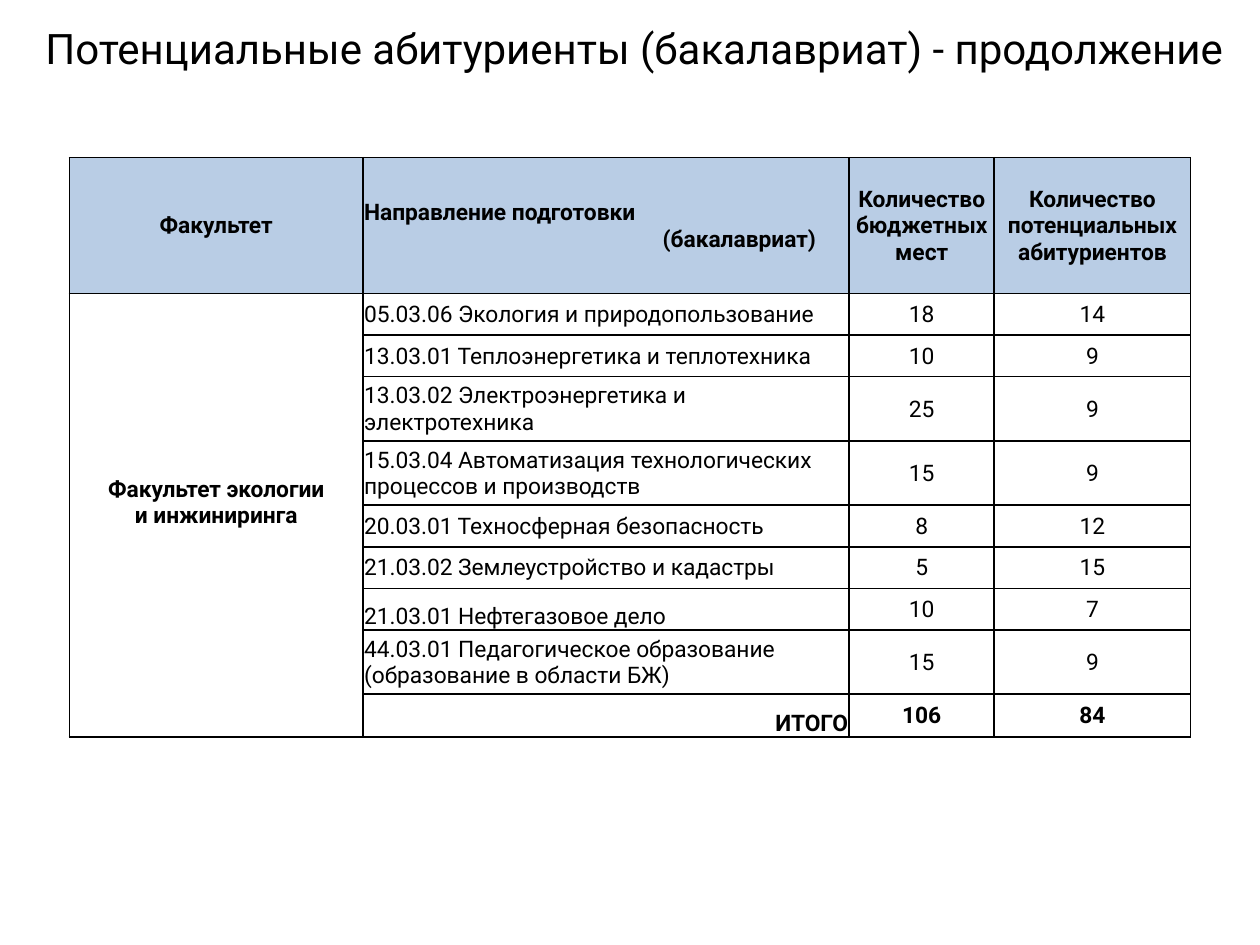
import pptx
import pptx.dml.color
import pptx.enum.text
import pptx.oxml
import pptx.oxml.ns
import pptx.util
from dataclasses import dataclass

Inches = pptx.util.Inches
ALIGN = pptx.enum.text.PP_ALIGN
ANCHOR = pptx.enum.text.MSO_ANCHOR


@dataclass(frozen=True)
class Theme:
    font: str = "Roboto"
    ink: str = "000000"
    header_fill: str = "B9CDE5"
    title_size: int = 24
    table_size: int = 13
    border_width: int = 1


class SlideBuilder:
    def __init__(self, slide, theme):
        self.slide = slide
        self.theme = theme

    def style(self, paragraph, size, bold=False, align=ALIGN.LEFT):
        paragraph.alignment = align
        font_format = {"name": self.theme.font, "size": pptx.util.Pt(size), "bold": bold}
        for name, value in font_format.items():
            setattr(paragraph.font, name, value)
        paragraph.font.color.rgb = pptx.dml.color.RGBColor.from_string(self.theme.ink)

    def title(self, wording, left, top, width, height):
        heading = self.slide.shapes.title
        place = {"left": left, "top": top, "width": width, "height": height}
        for name, value in place.items():
            setattr(heading, name, Inches(value))
        heading.text_frame.text = wording
        heading.text_frame.vertical_anchor = ANCHOR.MIDDLE
        self.style(heading.text_frame.paragraphs[0], self.theme.title_size, align=ALIGN.CENTER)

    def table(self, left, top, columns, rows):
        frame = self.slide.shapes.add_table(
            len(rows), len(columns), Inches(left), Inches(top),
            Inches(sum(columns)), Inches(sum(rows)))
        grid = frame.table
        grid.first_row = grid.horz_banding = False
        for column, width in zip(grid.columns, columns):
            column.width = Inches(width)
        for row, height in zip(grid.rows, rows):
            row.height = Inches(height)
        for cell in grid.iter_cells():
            self.border(cell)
            cell.fill.background()
        return grid

    def border(self, cell):
        properties = cell._tc.get_or_add_tcPr()
        width = pptx.util.Pt(self.theme.border_width)
        for side in ("lnL", "lnR", "lnT", "lnB"):
            properties.append(pptx.oxml.parse_xml(
                f'<a:{side} {pptx.oxml.ns.nsdecls("a")} w="{width}"><a:solidFill>'
                f'<a:srgbClr val="{self.theme.ink}"/></a:solidFill></a:{side}>'))

    def cell(self, cell, wording, bold=False, align=ALIGN.CENTER,
             anchor=ANCHOR.MIDDLE, fill=None, bottom=0):
        cell_format = {
            "text": wording, "vertical_anchor": anchor,
            "margin_left": Inches(0.01), "margin_right": Inches(0.01),
            "margin_top": Inches(0.01), "margin_bottom": Inches(bottom),
        }
        for name, value in cell_format.items():
            setattr(cell, name, value)
        if fill:
            cell.fill.solid()
            cell.fill.fore_color.rgb = pptx.dml.color.RGBColor.from_string(fill)
        for paragraph in cell.text_frame.paragraphs:
            self.style(paragraph, self.theme.table_size, bold, align)


HEADERS = ["Факультет", "Направление подготовки\n(бакалавриат)",
           "Количество бюджетных мест", "Количество потенциальных абитуриентов"]
# Programme, budget places, potential applicants, row height
PROGRAMMES = [
    ("05.03.06 Экология и природопользование", 18, 14, 0.33),
    ("13.03.01 Теплоэнергетика и теплотехника", 10, 9, 0.33),
    ("13.03.02 Электроэнергетика и электротехника", 25, 9, 0.51),
    ("15.03.04 Автоматизация технологических процессов и производств", 15, 9, 0.51),
    ("20.03.01 Техносферная безопасность", 8, 12, 0.33),
    ("21.03.02 Землеустройство и кадастры", 5, 15, 0.33),
    ("21.03.01 Нефтегазовое дело", 10, 7, 0.33),
    ("44.03.01 Педагогическое образование (образование в области БЖ)", 15, 9, 0.51),
]


def main():
    presentation = pptx.Presentation()
    presentation.slide_width, presentation.slide_height = Inches(10), Inches(7.5)
    theme = Theme()
    builder = SlideBuilder(
        presentation.slides.add_slide(presentation.slide_layouts[5]), theme)

    builder.title("Потенциальные абитуриенты (бакалавриат) - продолжение",
                  -0.16, 0, 10.39, 0.76)

    heights = [1.08, *(programme[3] for programme in PROGRAMMES), 0.34]
    admissions = builder.table(0.55, 1.25, [2.33, 3.86, 1.15, 1.56], heights)

    # Header row, with the degree level indented on its own line
    for column, header in enumerate(HEADERS):
        builder.cell(admissions.cell(0, column), header, bold=True, fill=theme.header_fill)
    direction, level = admissions.cell(0, 1).text_frame.paragraphs
    direction.alignment = level.alignment = ALIGN.LEFT
    level._p.get_or_add_pPr().set("marL", str(Inches(2.37)))

    # Faculty, spanning all programmes and the total
    total_row = len(PROGRAMMES) + 1
    faculty = admissions.cell(1, 0)
    faculty.merge(admissions.cell(total_row, 0))
    builder.cell(faculty, "Факультет экологии\nи инжиниринга", bold=True, bottom=0.21)

    # Programmes
    for row, (programme, places, applicants, _) in enumerate(PROGRAMMES, start=1):
        anchor = ANCHOR.BOTTOM if programme.startswith("21.03.01") else ANCHOR.MIDDLE
        builder.cell(admissions.cell(row, 1), programme, align=ALIGN.LEFT, anchor=anchor)
        for column, count in enumerate((places, applicants), start=2):
            builder.cell(admissions.cell(row, column), str(count))

    # Totals
    builder.cell(admissions.cell(total_row, 1), "ИТОГО", bold=True,
                 align=ALIGN.RIGHT, anchor=ANCHOR.BOTTOM)
    for column, field in ((2, 1), (3, 2)):
        total = sum(programme[field] for programme in PROGRAMMES)
        builder.cell(admissions.cell(total_row, column), str(total), bold=True)

    presentation.save("out.pptx")


if __name__ == "__main__":
    main()
